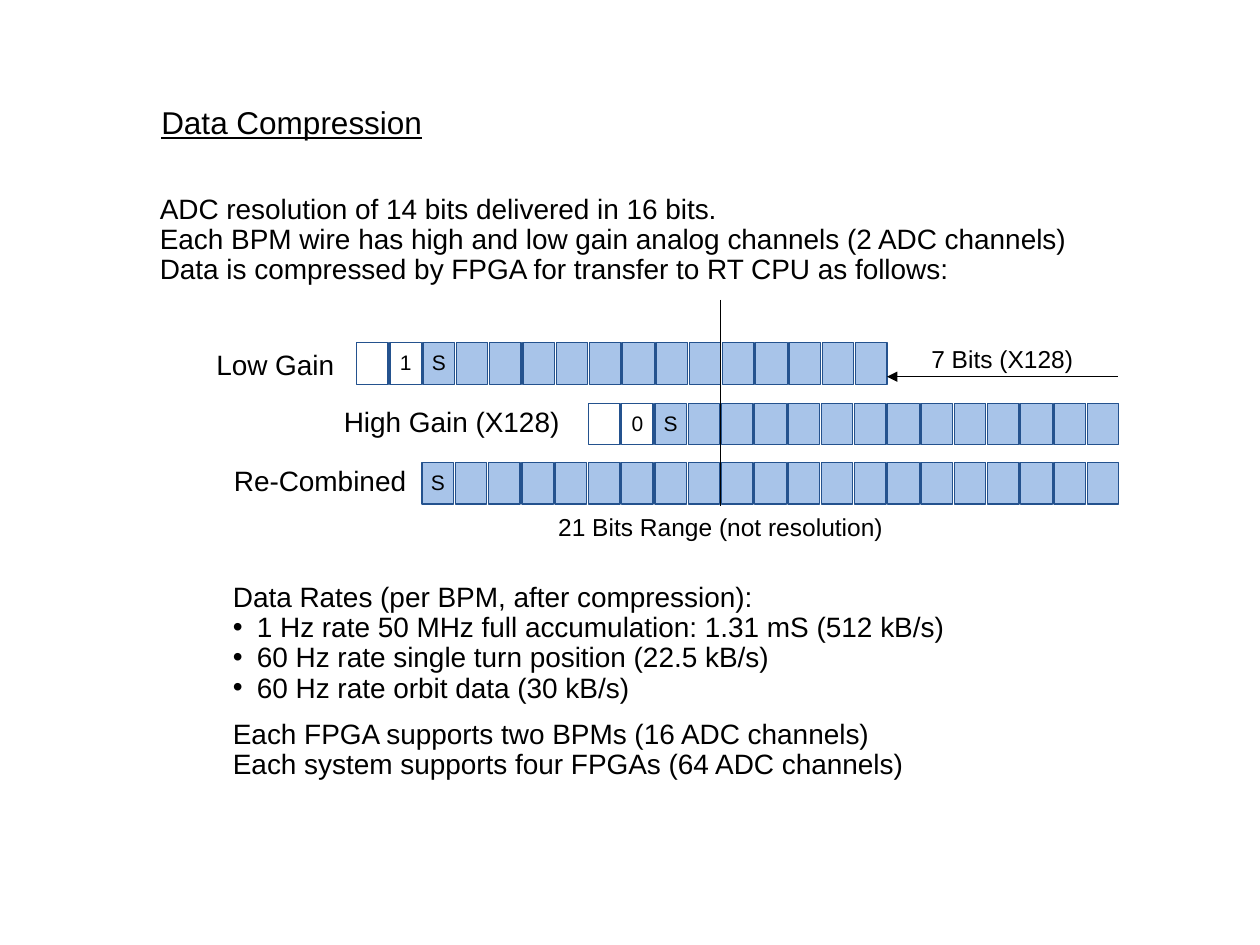
import pptx
import pptx.dml.color
import pptx.enum.shapes
import pptx.enum.text
import pptx.oxml.ns
import pptx.util
from lxml import etree
from pptx.util import Inches

FONT = "Arial"
BLACK, WHITE = "000000", "FFFFFF"
BIT_FILL, BIT_EDGE = "A8C4E9", "24528E"
BIT_WIDTH, BIT_HEIGHT = 0.25, 0.33
BIT_PITCH = (8.63 - 3.35) / 20  # 21 bits from the sign bit to the last bit
LEFT = pptx.enum.text.PP_ALIGN.LEFT
CENTER = pptx.enum.text.PP_ALIGN.CENTER


def color(hex_code):
    return pptx.dml.color.RGBColor.from_string(hex_code)


def add_child(parent, tag, **attributes):
    return etree.SubElement(parent, pptx.oxml.ns.qn(tag), attributes)


def add_bullet(paragraph):
    properties = paragraph._p.get_or_add_pPr()
    indent = Inches(0.19)
    properties.set("marL", str(indent))
    properties.set("indent", str(-indent))
    add_child(properties, "a:buFont", typeface=FONT)
    add_child(properties, "a:buChar", char="•")


def add_text(slide, box, lines, size=16, align=CENTER, bullets_from=None, underline=None):
    """Add a text box; lines from index bullets_from onward get bullets."""
    frame = slide.shapes.add_textbox(*map(Inches, box)).text_frame
    frame.word_wrap = False
    frame.auto_size = pptx.enum.text.MSO_AUTO_SIZE.SHAPE_TO_FIT_TEXT
    frame.text = "\n".join(lines)
    for index, paragraph in enumerate(frame.paragraphs):
        paragraph.alignment = align
        paragraph.line_spacing = 0.9
        if bullets_from is not None and index >= bullets_from:
            add_bullet(paragraph)
        for run in paragraph.runs:
            run.font.name = FONT
            run.font.size = pptx.util.Pt(size)
            run.font.underline = underline
            run.font.color.rgb = color(BLACK)


def add_bit(slide, left, top, fill):
    bit = slide.shapes.add_shape(
        pptx.enum.shapes.MSO_SHAPE.RECTANGLE,
        Inches(left), Inches(top), Inches(BIT_WIDTH), Inches(BIT_HEIGHT))
    bit.shadow.inherit = False
    bit.fill.solid()
    bit.fill.fore_color.rgb = color(fill)
    bit.line.color.rgb = color(BIT_EDGE)
    bit.line.width = pptx.util.Pt(0.75)


def add_word(slide, left, top, bit_count, flag_count, marks):
    """Draw a row of bits: white flag bits first, then data bits."""
    for index in range(bit_count):
        fill = WHITE if index < flag_count else BIT_FILL
        add_bit(slide, left + index * BIT_PITCH, top, fill)
    mark_width = 0.31
    for index, mark in marks.items():
        mark_left = left + index * BIT_PITCH + (BIT_WIDTH - mark_width) / 2
        add_text(slide, (mark_left, top + 0.03, mark_width, 0.28), [mark], size=12)


def add_line(slide, start, end, arrow=False):
    line = slide.shapes.add_connector(
        pptx.enum.shapes.MSO_CONNECTOR.STRAIGHT, *map(Inches, start + end))
    line.line.color.rgb = color(BLACK)
    line.line.width = pptx.util.Pt(0.5)
    if arrow:
        add_child(line.line._get_or_add_ln(), "a:tailEnd", type="triangle")
    add_child(line._element.spPr, "a:effectLst")


def main():
    presentation = pptx.Presentation()
    presentation.slide_width = Inches(10)
    presentation.slide_height = Inches(7.5)
    slide = presentation.slides.add_slide(presentation.slide_layouts[6])

    # Title and introduction
    add_text(slide, (1.17, 0.8, 2.29, 0.37), ["Data Compression"], size=18, underline=True)
    add_text(slide, (1.17, 1.5, 7.48, 0.83), [
        "ADC resolution of 14 bits delivered in 16 bits.",
        "Each BPM wire has high and low gain analog channels (2 ADC channels)",
        "Data is compressed by FPGA for transfer to RT CPU as follows:",
    ], align=LEFT)

    # Bit layout of the two gain channels and their combination
    add_word(slide, 2.83, 2.72, 16, 2, {1: "1", 2: "S"})
    add_word(slide, 4.67, 3.2, 16, 2, {1: "0", 2: "S"})
    add_word(slide, 3.35, 3.67, 21, 0, {0: "S"})
    add_text(slide, (1.61, 2.74, 1.15, 0.34), ["Low Gain"])
    add_text(slide, (2.62, 3.19, 1.93, 0.34), ["High Gain (X128)"])
    add_text(slide, (1.75, 3.66, 1.58, 0.34), ["Re-Combined"])

    # Shift arrow, alignment line and range note
    add_text(slide, (7.29, 2.71, 1.33, 0.31), ["7 Bits (X128)"], size=14)
    add_line(slide, (8.87, 2.99), (7.04, 2.99), arrow=True)
    add_line(slide, (5.72, 2.38), (5.72, 4.02))
    add_text(slide, (4.33, 4.04, 2.78, 0.31), ["21 Bits Range (not resolution)"], size=14)

    # Data rates and system capacity
    add_text(slide, (1.75, 4.58, 5.92, 1.07), [
        "Data Rates (per BPM, after compression):",
        "1 Hz rate 50 MHz full accumulation: 1.31 mS (512 kB/s)",
        "60 Hz rate single turn position (22.5 kB/s)",
        "60 Hz rate orbit data (30 kB/s)",
    ], align=LEFT, bullets_from=1)
    add_text(slide, (1.75, 5.67, 5.59, 0.59), [
        "Each FPGA supports two BPMs (16 ADC channels)",
        "Each system supports four FPGAs (64 ADC channels)",
    ], align=LEFT)

    presentation.save("out.pptx")


if __name__ == "__main__":
    main()
